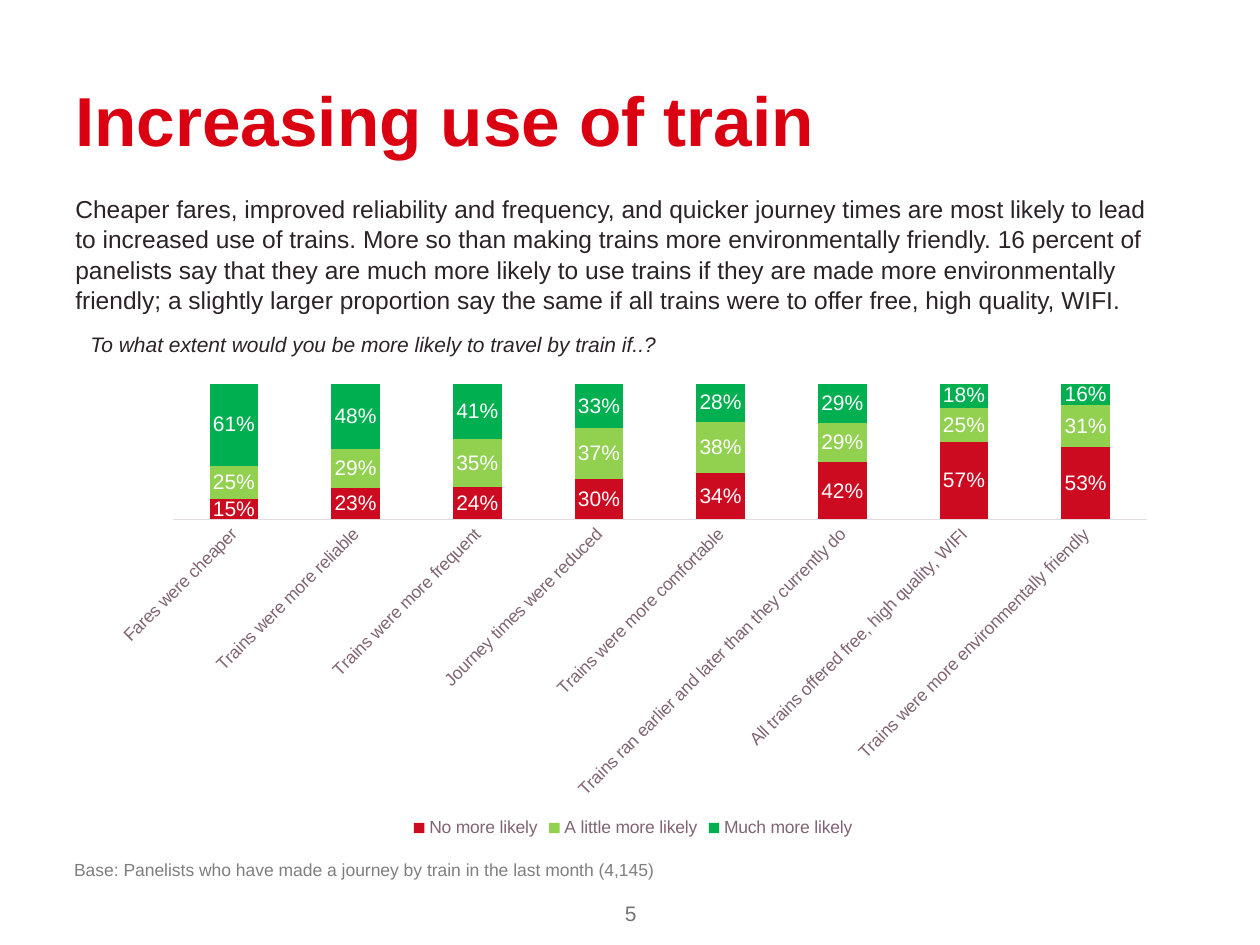
from lxml import etree
from pptx import Presentation, util as u
from pptx.chart.data import CategoryChartData
from pptx.dml.color import RGBColor
from pptx.enum import chart as ch, text
from pptx.oxml.ns import qn

FONT = "Arial"
COLORS = {"title": "DA0011", "body": "2C2227", "axis": "816473", "line": "E3DADF",
          "note": "7F7F7F", "number": "747474", "label": "FFFFFF"}

# Text, (left, top, width, height), size, colour, further settings
TEXTS = [
    ("Increasing use of train", (0.5, 0.53, 9, 0.74), 39.6, "title",
     {"bold": True, "anchor": text.MSO_ANCHOR.BOTTOM, "inset": 0}),
    ("Cheaper fares, improved reliability and frequency, and quicker journey times are most "
     "likely to lead to increased use of trains. More so than making trains more "
     "environmentally friendly. 16 percent of panelists say that they are much more likely to "
     "use trains if they are made more environmentally friendly; a slightly larger proportion "
     "say the same if all trains were to offer free, high quality, WIFI.",
     (0.5, 1.48, 8.84, 1.1), 14, "body", {"spacing": 1.04}),
    ("To what extent would you be more likely to travel by train if..?",
     (0.62, 2.58, 8.73, 0.3), 12, "body", {"italic": True}),
    ("Base: Panelists who have made a journey by train in the last month (4,145)",
     (0.49, 6.77, 6.6, 0.27), 10, "note", {}),
    ("5", (3.42, 7.1, 3.17, 0.34), 12, "number", {"align": text.PP_ALIGN.CENTER}),
]

CHART_AREA = (0.78, 2.97, 8.49, 3.72)
PLOT_SHARES = {"x": 0.07, "y": 0.02, "w": 0.91, "h": 0.29}
CATEGORIES = [
    "Fares were cheaper", "Trains were more reliable", "Trains were more frequent",
    "Journey times were reduced", "Trains were more comfortable",
    "Trains ran earlier and later than they currently do",
    "All trains offered free, high quality, WIFI",
    "Trains were more environmentally friendly",
]
SERIES = [
    ("No more likely", "CC0A20", (0.15, 0.23, 0.24, 0.3, 0.34, 0.42, 0.57, 0.53)),
    ("A little more likely", "92D050", (0.25, 0.29, 0.35, 0.37, 0.38, 0.29, 0.25, 0.31)),
    ("Much more likely", "00B050", (0.61, 0.48, 0.41, 0.33, 0.28, 0.29, 0.18, 0.16)),
]


def style(font, size, color):
    font.name, font.size = FONT, u.Pt(size)
    font.color.rgb = RGBColor.from_string(COLORS[color])


def add_text(page, wording, area, size, color, options):
    box = page.shapes.add_textbox(*map(u.Inches, area))
    frame = box.text_frame
    frame.text = wording
    frame.word_wrap = True
    frame.vertical_anchor = options.get("anchor", text.MSO_ANCHOR.TOP)
    frame.margin_top = frame.margin_bottom = u.Inches(options.get("inset", 0.05))
    para = frame.paragraphs[0]
    para.alignment = options.get("align", text.PP_ALIGN.LEFT)
    para.line_spacing = options.get("spacing")
    font = para.runs[0].font
    style(font, size, color)
    font.bold, font.italic = options.get("bold", False), options.get("italic", False)


def place_plot(chart):
    """Fix the inner plot area as shares of the chart's size."""
    plot_area = chart.plots[0]._element.getparent()
    for old in plot_area.findall(qn("c:layout")):
        plot_area.remove(old)
    layout = etree.Element(qn("c:layout"))
    plot_area.insert(0, layout)
    manual = etree.SubElement(layout, qn("c:manualLayout"))
    settings = {"layoutTarget": "inner", "xMode": "edge", "yMode": "edge", **PLOT_SHARES}
    for tag, value in settings.items():
        etree.SubElement(manual, qn(f"c:{tag}")).set("val", str(value))


def add_likelihood_chart(page):
    data = CategoryChartData(number_format="0%")
    data.categories = CATEGORIES
    for name, _, values in SERIES:
        data.add_series(name, values)
    chart = page.shapes.add_chart(ch.XL_CHART_TYPE.COLUMN_STACKED_100,
                                  *map(u.Inches, CHART_AREA), data).chart
    style(chart.font, 10, "body")
    chart.has_title = False
    chart.has_legend = True
    chart.legend.position = ch.XL_LEGEND_POSITION.BOTTOM
    chart.legend.include_in_layout = False
    style(chart.legend.font, 10, "axis")

    chart.value_axis.visible = False
    chart.value_axis.has_major_gridlines = False
    chart.value_axis.maximum_scale = 1
    axis = chart.category_axis
    axis.major_tick_mark = ch.XL_TICK_MARK.NONE
    style(axis.tick_labels.font, 10, "axis")
    axis.format.line.color.rgb = RGBColor.from_string(COLORS["line"])
    axis.format.line.width = u.Pt(0.75)
    axis._element.find(qn("c:txPr")).find(qn("a:bodyPr")).set("rot", str(-45 * 60000))

    plot = chart.plots[0]
    plot.gap_width, plot.overlap = 150, 100
    plot.vary_by_categories = False
    for series, (_, color, _) in zip(plot.series, SERIES):
        series.format.fill.solid()
        series.format.fill.fore_color.rgb = RGBColor.from_string(color)
        labels = series.data_labels
        labels.show_value = True
        labels.number_format, labels.number_format_is_linked = "0%", False
        labels.position = ch.XL_LABEL_POSITION.CENTER
        style(labels.font, 12, "label")
    place_plot(chart)


def main():
    deck = Presentation()
    deck.slide_width, deck.slide_height = u.Inches(10), u.Inches(7.5)
    page = deck.slides.add_slide(deck.slide_layouts[6])
    add_likelihood_chart(page)
    for entry in TEXTS:
        add_text(page, *entry)
    deck.save("out.pptx")


if __name__ == "__main__":
    main()
